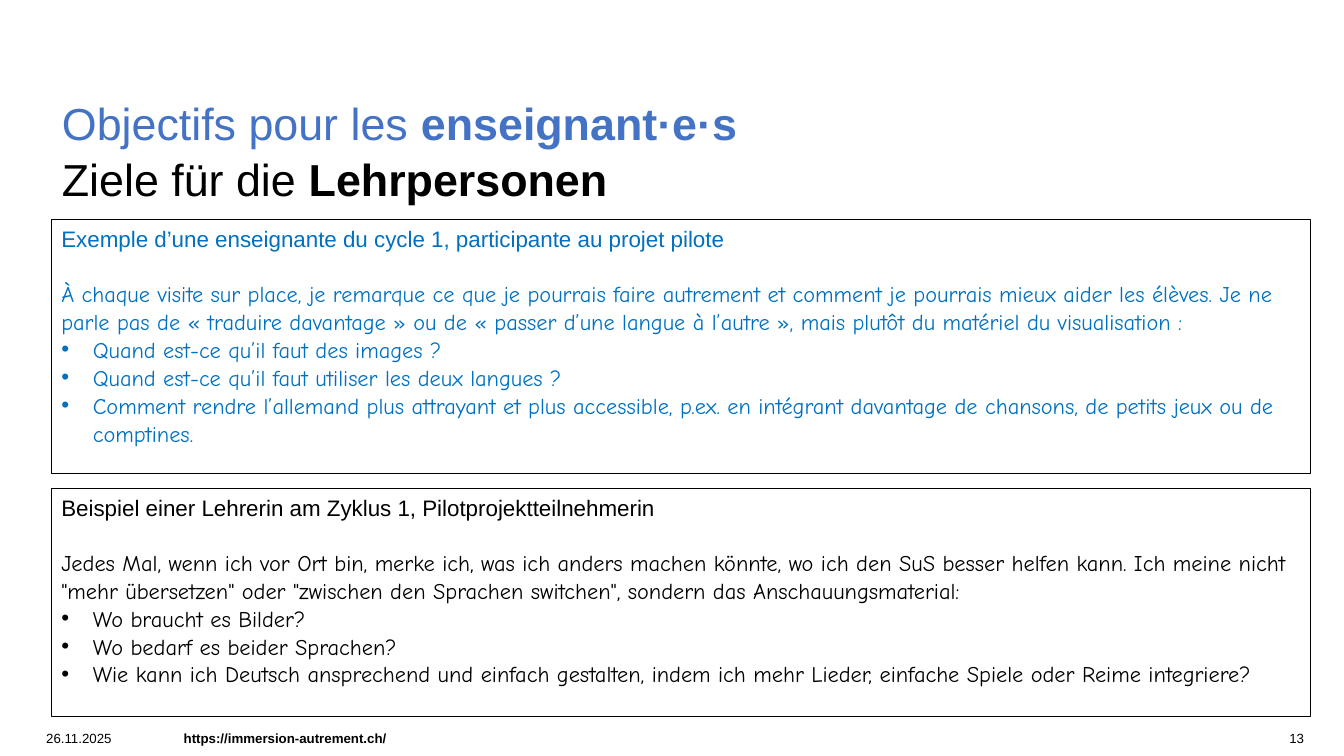
"""Build the bilingual slide on goals for teachers."""
from dataclasses import dataclass

from lxml import etree
from pptx import Presentation
from pptx.dml.color import RGBColor
from pptx.enum.shapes import MSO_SHAPE
from pptx.enum.text import MSO_ANCHOR, PP_ALIGN
from pptx.oxml.ns import qn
from pptx.util import Pt

RECTANGLE = MSO_SHAPE.RECTANGLE
TOP = MSO_ANCHOR.TOP
LEFT, RIGHT = PP_ALIGN.LEFT, PP_ALIGN.RIGHT

EMU_PER_PX = 9525
BLACK, TITLE_BLUE, TEXT_BLUE = "000000", "4472C4", "0070C0"
SANS, HAND = "Arial", "Comic Neue"
BULLET_INDENT = 30
LINE_SPACING = 1.04


@dataclass(frozen=True)
class Frame:
    """Position and size in px."""
    left: int
    top: int
    width: int
    height: int


@dataclass(frozen=True)
class Panel:
    """A framed example with a heading, a quote and questions."""
    frame: Frame
    color: str
    heading: str
    quote: str
    questions: tuple[str, ...]


@dataclass(frozen=True)
class FooterItem:
    """One short text in the footer."""
    frame: Frame
    text: str
    bold: bool = False
    alignment: PP_ALIGN = LEFT


@dataclass(frozen=True)
class TitleLine:
    """A title line that ends in a bold word."""
    color: str
    plain: str
    strong: str


TITLE_FRAME = Frame(59, 89, 1199, 104)
TITLE_LINES = (
    TitleLine(TITLE_BLUE, "Objectifs pour les ", "enseignant·e·s"),
    TitleLine(BLACK, "Ziele für die ", "Lehrpersonen"),
)
PANELS = (
    Panel(
        Frame(49, 209, 1199, 242), TEXT_BLUE,
        "Exemple d’une enseignante du cycle 1, participante au projet pilote",
        "À chaque visite sur place, je remarque ce que je pourrais faire autrement et "
        "comment je pourrais mieux aider les élèves. Je ne parle pas de « traduire "
        "davantage » ou de « passer d’une langue à l’autre », mais plutôt du matériel "
        "du visualisation :",
        ("Quand est-ce qu’il faut des images ?",
         "Quand est-ce qu’il faut utiliser les deux langues ?",
         "Comment rendre l’allemand plus attrayant et plus accessible, p.ex. en "
         "intégrant davantage de chansons, de petits jeux ou de comptines."),
    ),
    Panel(
        Frame(49, 465, 1199, 217), BLACK,
        "Beispiel einer Lehrerin am Zyklus 1, Pilotprojektteilnehmerin",
        "Jedes Mal, wenn ich vor Ort bin, merke ich, was ich anders machen könnte, wo "
        "ich den SuS besser helfen kann. Ich meine nicht \"mehr übersetzen\" oder "
        "\"zwischen den Sprachen switchen\", sondern das Anschauungsmaterial:",
        ("Wo braucht es Bilder?",
         "Wo bedarf es beider Sprachen?",
         "Wie kann ich Deutsch ansprechend und einfach gestalten, indem ich mehr "
         "Lieder, einfache Spiele oder Reime integriere?"),
    ),
)
FOOTER = (
    FooterItem(Frame(44, 695, 125, 15), "26.11.2025"),
    FooterItem(Frame(175, 695, 850, 15), "https://immersion-autrement.ch/", bold=True),
    FooterItem(Frame(1203, 695, 39, 15), "13", alignment=RIGHT),
)


def px(length: int) -> int:
    """Turn px into EMU."""
    return length * EMU_PER_PX


def rgb(color: str) -> RGBColor:
    """Turn a hex string into a colour."""
    return RGBColor.from_string(color)


def place(frame: Frame) -> tuple[int, ...]:
    """Return the frame in EMU."""
    return tuple(map(px, (frame.left, frame.top, frame.width, frame.height)))


def apply(target, values: dict) -> None:
    """Set attributes from a dict of format values."""
    for name, value in values.items():
        setattr(target, name, value)


def add_span(para, text: str, size: float, color: str, font: str = SANS,
             bold: bool = False) -> None:
    """Add a formatted run to a paragraph."""
    span = para.add_run()
    span.text = text
    apply(span.font, {"name": font, "size": Pt(size), "bold": bold})
    span.font.color.rgb = rgb(color)


def add_para(text_frame, first: bool = False, **values):
    """Return the first or a new paragraph with the given format."""
    para = text_frame.paragraphs[0] if first else text_frame.add_paragraph()
    apply(para, {"alignment": LEFT, "line_spacing": LINE_SPACING} | values)
    return para


def add_bullet(para) -> None:
    """Give a paragraph a hanging bullet."""
    properties = para._p.get_or_add_pPr()
    properties.set("marL", str(px(BULLET_INDENT)))
    properties.set("indent", str(-px(BULLET_INDENT)))
    etree.SubElement(properties, qn("a:buFont"), typeface=SANS)
    etree.SubElement(properties, qn("a:buChar"), char="•")


def add_text_box(slide, frame: Frame):
    """Add a text box without margins and return its text frame."""
    text_frame = slide.shapes.add_textbox(*place(frame)).text_frame
    margins = dict.fromkeys(
        ("margin_left", "margin_top", "margin_right", "margin_bottom"), 0)
    apply(text_frame, {"word_wrap": True, "vertical_anchor": TOP} | margins)
    return text_frame


def add_title(slide) -> None:
    """Add the two-line title."""
    text_frame = add_text_box(slide, TITLE_FRAME)
    for index, line in enumerate(TITLE_LINES):
        para = add_para(text_frame, first=index == 0)
        add_span(para, line.plain, 32, line.color)
        add_span(para, line.strong, 32, line.color, bold=True)


def add_panel(slide, panel: Panel) -> None:
    """Add a framed example."""
    box = slide.shapes.add_shape(RECTANGLE, *place(panel.frame))
    box.shadow.inherit = False
    box.fill.background()
    box.line.color.rgb = rgb(BLACK)
    box.line.width = Pt(0.75)
    text_frame = box.text_frame
    apply(text_frame, {"word_wrap": True, "vertical_anchor": TOP})
    add_span(add_para(text_frame, first=True), panel.heading, 16, panel.color)
    quote = add_para(text_frame, space_before=Pt(19))
    add_span(quote, panel.quote, 16, panel.color, HAND)
    for question in panel.questions:
        para = add_para(text_frame)
        add_bullet(para)
        add_span(para, question, 16, panel.color, HAND)


def add_footer_item(slide, item: FooterItem) -> None:
    """Add one footer text."""
    text_frame = add_text_box(slide, item.frame)
    para = add_para(text_frame, first=True, alignment=item.alignment, line_spacing=1.0)
    add_span(para, item.text, 9.5, BLACK, bold=item.bold)


def main() -> None:
    """Build and save the deck."""
    deck = Presentation()
    apply(deck, {"slide_width": px(1280), "slide_height": px(720)})
    slide = deck.slides.add_slide(deck.slide_layouts[6])
    add_title(slide)
    for panel in PANELS:
        add_panel(slide, panel)
    for item in FOOTER:
        add_footer_item(slide, item)
    deck.save("out.pptx")


if __name__ == "__main__":
    main()
